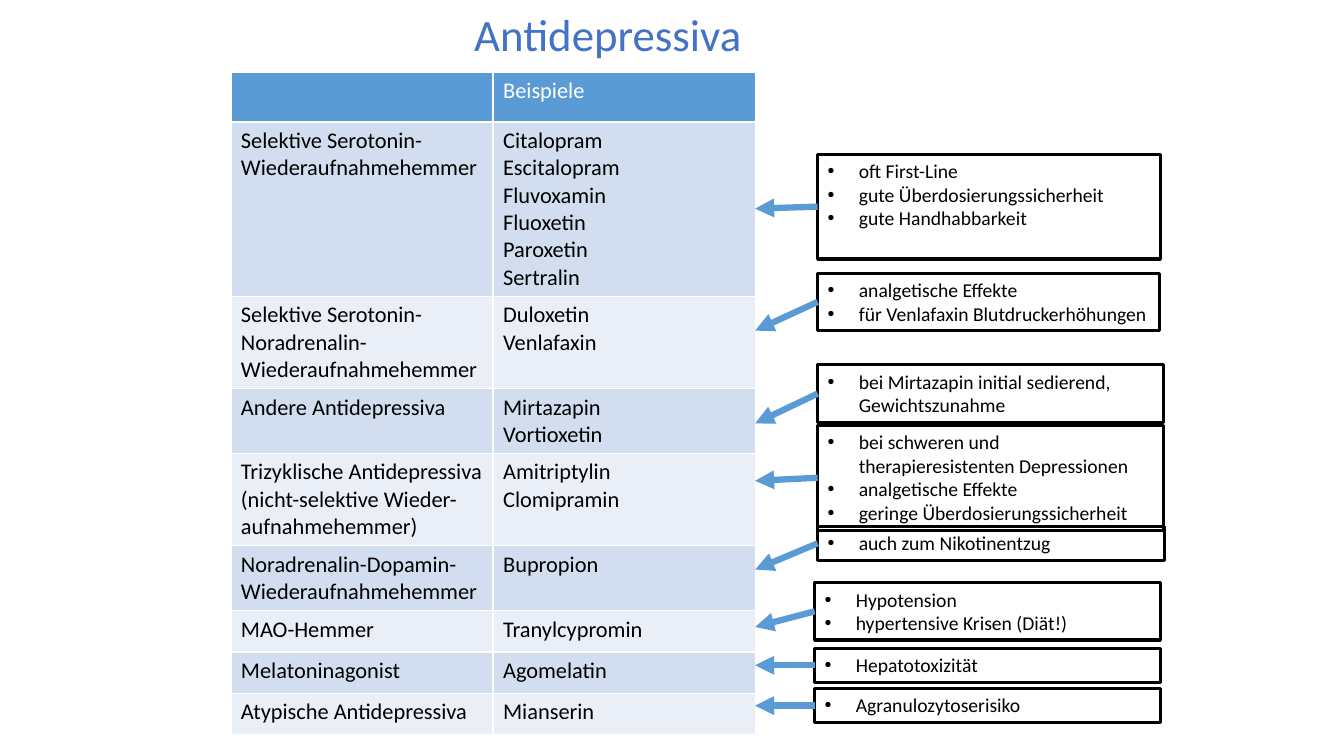
from pptx import Presentation
from pptx import util as u
from pptx.dml.color import RGBColor
from pptx.enum import shapes, text
from pptx.oxml.ns import qn
from lxml import etree

COLORS = {
    "title": "4472C4",
    "accent": "5B9BD5",
    "band_dark": "D2DEEF",
    "band_light": "EAEFF7",
    "text": "000000",
    "white": "FFFFFF",
}

TABLE_ROWS = [
    ("", "Beispiele"),
    ("Selektive Serotonin-Wiederaufnahmehemmer",
     "Citalopram\nEscitalopram\nFluvoxamin\nFluoxetin\nParoxetin\nSertralin"),
    ("Selektive Serotonin-Noradrenalin-Wiederaufnahmehemmer", "Duloxetin\nVenlafaxin"),
    ("Andere Antidepressiva", "Mirtazapin\nVortioxetin"),
    ("Trizyklische Antidepressiva (nicht-selektive Wieder-aufnahmehemmer)",
     "Amitriptylin\nClomipramin"),
    ("Noradrenalin-Dopamin-Wiederaufnahmehemmer", "Bupropion"),
    ("MAO-Hemmer", "Tranylcypromin"),
    ("Melatoninagonist", "Agomelatin"),
    ("Atypische Antidepressiva", "Mianserin"),
]

TABLE_LEFT, TABLE_TOP, COLUMN_WIDTH = 2.29, 0.72, 2.6
HEADER_HEIGHT, ROW_HEIGHT = 0.49, 0.41
ARROW_END = 7.49

NOTES = [
    (8.11, 1.53, 3.4, 1.04, 2.07,
     ["oft First-Line", "gute Überdosierungssicherheit", "gute Handhabbarkeit"]),
    (8.11, 2.71, 3.39, 0.57, 3.28,
     ["analgetische Effekte", "für Venlafaxin Blutdruckerhöhungen"]),
    (8.11, 3.62, 3.43, 0.57, 4.2,
     ["bei Mirtazapin initial sedierend, Gewichtszunahme"]),
    (8.11, 4.22, 3.43, 1.04, 4.77,
     ["bei schweren und therapieresistenten Depressionen", "analgetische Effekte",
      "geringe Überdosierungssicherheit"]),
    (8.11, 5.22, 3.44, 0.34, 5.65, ["auch zum Nikotinentzug"]),
    (8.08, 5.78, 3.43, 0.57, 6.22, ["Hypotension", "hypertensive Krisen (Diät!)"]),
    (8.08, 6.43, 3.43, 0.34, 6.6, ["Hepatotoxizität"]),
    (8.08, 6.83, 3.43, 0.34, 7, ["Agranulozytoserisiko"]),
]


class SlideBuilder:
    font_name = "Calibri"

    def __init__(self, presentation):
        self.slide = presentation.slides.add_slide(presentation.slide_layouts[5])

    def color(self, name):
        return RGBColor.from_string(COLORS[name])

    def format_font(self, paragraph, size, color):
        font = paragraph.font
        font.name = self.font_name
        font.size = u.Pt(size)
        font.bold = False
        font.color.rgb = self.color(color)

    def title(self, wording, left, top, width, height):
        shape = self.slide.shapes.title
        shape.left, shape.top = u.Inches(left), u.Inches(top)
        shape.width, shape.height = u.Inches(width), u.Inches(height)
        frame = shape.text_frame
        frame.text = wording
        frame.auto_size = text.MSO_AUTO_SIZE.NONE
        frame.vertical_anchor = text.MSO_ANCHOR.MIDDLE
        paragraph = frame.paragraphs[0]
        paragraph.alignment = text.PP_ALIGN.CENTER
        paragraph.line_spacing = 0.9
        self.format_font(paragraph, 32, "title")

    def table(self, rows):
        height = HEADER_HEIGHT + ROW_HEIGHT * (len(rows) - 1)
        table = self.slide.shapes.add_table(
            len(rows), 2, u.Inches(TABLE_LEFT), u.Inches(TABLE_TOP),
            u.Inches(2 * COLUMN_WIDTH), u.Inches(height)).table
        for column in table.columns:
            column.width = u.Inches(COLUMN_WIDTH)
        for index, wordings in enumerate(rows):
            header = index == 0
            table.rows[index].height = u.Inches(HEADER_HEIGHT if header else ROW_HEIGHT)
            band = "band_dark" if index % 2 else "band_light"
            for cell, wording in zip(table.rows[index].cells, wordings):
                cell.fill.solid()
                cell.fill.fore_color.rgb = self.color("accent" if header else band)
                cell.text = wording
                for paragraph in cell.text_frame.paragraphs:
                    self.format_font(paragraph, 16, "white" if header else "text")

    def bullet_box(self, left, top, width, height, items):
        box = self.slide.shapes.add_textbox(
            u.Inches(left), u.Inches(top), u.Inches(width), u.Inches(height))
        box.line.color.rgb = self.color("text")
        box.line.width = u.Pt(2.25)
        frame = box.text_frame
        frame.word_wrap = True
        frame.text = "\n".join(items)
        for paragraph in frame.paragraphs:
            self.format_font(paragraph, 14, "text")
            properties = paragraph._p.get_or_add_pPr()
            properties.set("marL", str(u.Inches(0.31)))
            properties.set("indent", str(u.Inches(-0.31)))
            bullet = etree.Element(qn("a:buChar"), char="•")
            bullet_font = etree.Element(qn("a:buFont"), typeface="Arial")
            properties.insert(0, bullet_font)
            properties.insert(1, bullet)
        return box

    def arrow(self, box, end_x, end_y):
        connector = self.slide.shapes.add_connector(
            shapes.MSO_CONNECTOR.STRAIGHT, box.left, box.top + box.height // 2,
            u.Inches(end_x), u.Inches(end_y))
        connector.begin_connect(box, 1)
        connector.line.color.rgb = self.color("accent")
        connector.line.width = u.Pt(4.5)
        etree.SubElement(connector.line._get_or_add_ln(), qn("a:tailEnd"), type="triangle")
        etree.SubElement(connector._element.spPr, qn("a:effectLst"))


def main():
    presentation = Presentation()
    presentation.slide_width = u.Inches(13.33)
    presentation.slide_height = u.Inches(7.5)
    builder = SlideBuilder(presentation)
    builder.title("Antidepressiva", 1.78, 0.13, 8.5, 0.47)
    builder.table(TABLE_ROWS)
    for left, top, width, height, arrow_y, items in NOTES:
        box = builder.bullet_box(left, top, width, height, items)
        builder.arrow(box, ARROW_END, arrow_y)
    presentation.save("out.pptx")


if __name__ == "__main__":
    main()
